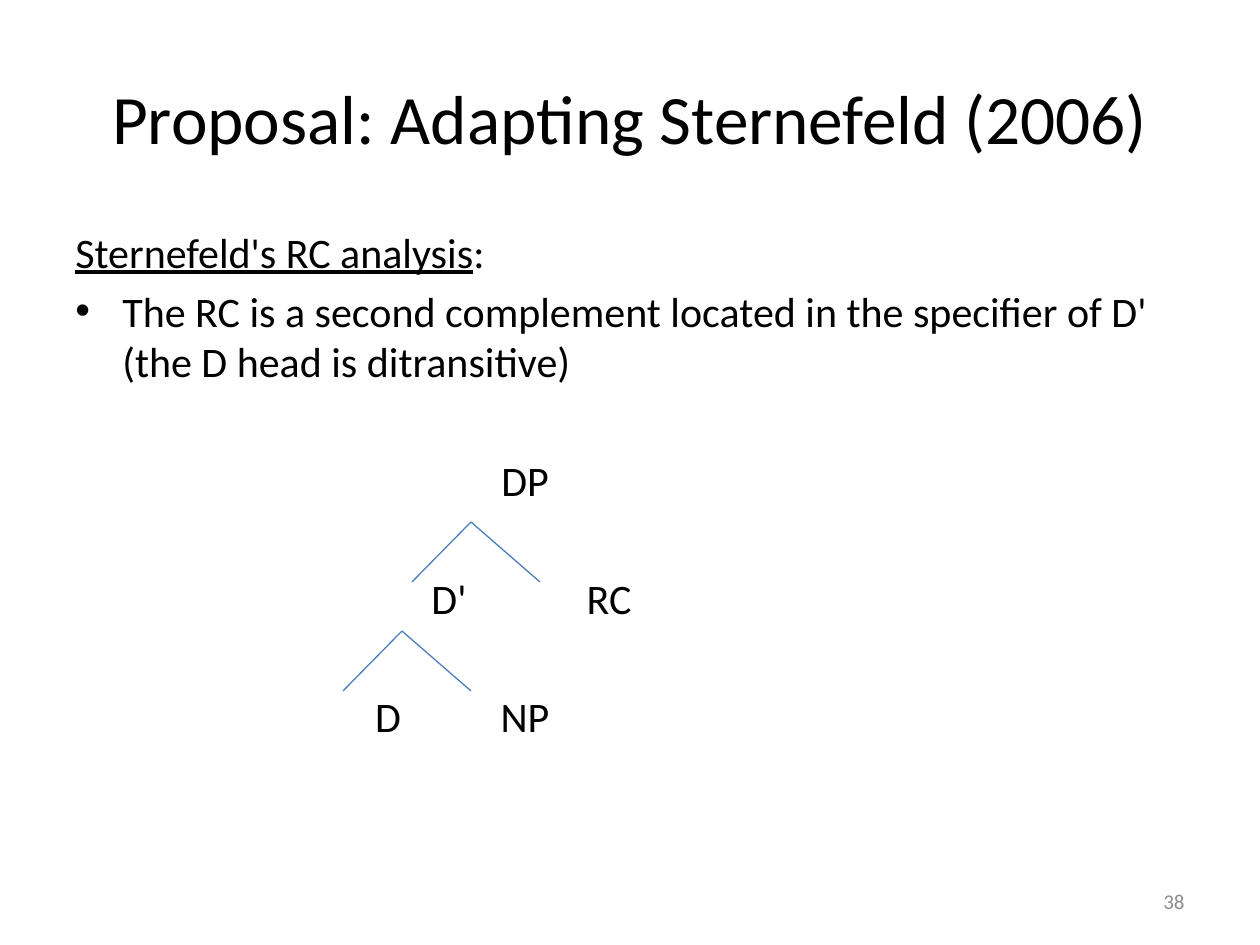
from dataclasses import dataclass

from lxml import etree
from pptx import Presentation
from pptx.dml.color import RGBColor
from pptx.enum.shapes import MSO_CONNECTOR
from pptx.enum.text import MSO_ANCHOR, PP_ALIGN
from pptx.oxml.ns import qn
from pptx.util import Pt

STRAIGHT = MSO_CONNECTOR.STRAIGHT
TOP, MIDDLE = MSO_ANCHOR.TOP, MSO_ANCHOR.MIDDLE
LEFT, CENTER, RIGHT = PP_ALIGN.LEFT, PP_ALIGN.CENTER, PP_ALIGN.RIGHT
EMU_PER_PX = 914400 / 126


@dataclass
class Theme:
    font: str = "Calibri"
    ink: RGBColor = RGBColor(0x00, 0x00, 0x00)
    muted: RGBColor = RGBColor(0x8C, 0x8C, 0x8C)
    branch: RGBColor = RGBColor(0x4B, 0x7E, 0xBC)
    title_size: float = 39.6
    body_size: float = 24
    number_size: float = 12
    branch_width: float = 0.75


theme = Theme()


def px(value):
    return round(value * EMU_PER_PX)


def format_text(frame, size, color, align, anchor):
    frame.word_wrap = True
    frame.vertical_anchor = anchor
    for paragraph in frame.paragraphs:
        paragraph.alignment = align
        for run in paragraph.runs:
            run.font.name = theme.font
            run.font.size = Pt(size)
            run.font.color.rgb = color


prs = Presentation()
prs.slide_width, prs.slide_height = px(1260), px(945)
slide = prs.slides.add_slide(prs.slide_layouts[5])
shapes = slide.shapes

# Title
title = shapes.title
title.left, title.top, title.width, title.height = px(63), px(38), px(1134), px(157)
title.text_frame.text = "Proposal: Adapting Sternefeld (2006)"
format_text(title.text_frame, theme.title_size, theme.ink, CENTER, MIDDLE)

# Analysis heading and bullet
analysis = shapes.add_textbox(px(63), px(220), px(1134), px(180)).text_frame
heading = analysis.paragraphs[0]
heading.text = "Sternefeld's RC analysis"
heading.runs[0].font.underline = True
heading.add_run().text = ":"
claim = analysis.add_paragraph()
claim.text = ("The RC is a second complement located in the specifier of D' "
              "(the D head is ditransitive)")
claim.space_before = Pt(4.8)
claim_props = claim._p.get_or_add_pPr()
claim_props.set("marL", str(px(47)))
claim_props.set("indent", str(px(-47)))
etree.SubElement(claim_props, qn("a:buFont")).set("typeface", "Arial")
etree.SubElement(claim_props, qn("a:buChar")).set("char", "•")
format_text(analysis, theme.body_size, theme.ink, LEFT, TOP)

# Tree nodes: label, centre x, row
NODE_W, NODE_H, FIRST_ROW, ROW_STEP = 80, 52, 455, 118
nodes = [("DP", 525, 0), ("D'", 449, 1), ("RC", 609, 1), ("D", 388, 2), ("NP", 525, 2)]
for label, center_x, row in nodes:
    node = shapes.add_textbox(px(center_x - NODE_W // 2), px(FIRST_ROW + row * ROW_STEP),
                              px(NODE_W), px(NODE_H)).text_frame
    node.margin_left = node.margin_right = node.margin_top = node.margin_bottom = 0
    node.text = label
    format_text(node, theme.body_size, theme.ink, CENTER, TOP)

# Tree branches: each apex has a left and a right arm
for apex_x, apex_y in [(471, 522), (402, 631)]:
    for reach in (-59, 69):
        branch = shapes.add_connector(STRAIGHT, px(apex_x), px(apex_y),
                                      px(apex_x + reach), px(apex_y + 60))
        branch.line.color.rgb = theme.branch
        branch.line.width = Pt(theme.branch_width)
        etree.SubElement(branch._element.spPr, qn("a:effectLst"))

# Slide number
number = shapes.add_textbox(px(903), px(876), px(294), px(50)).text_frame
number.text = "38"
format_text(number, theme.number_size, theme.muted, RIGHT, MIDDLE)

prs.save("out.pptx")
